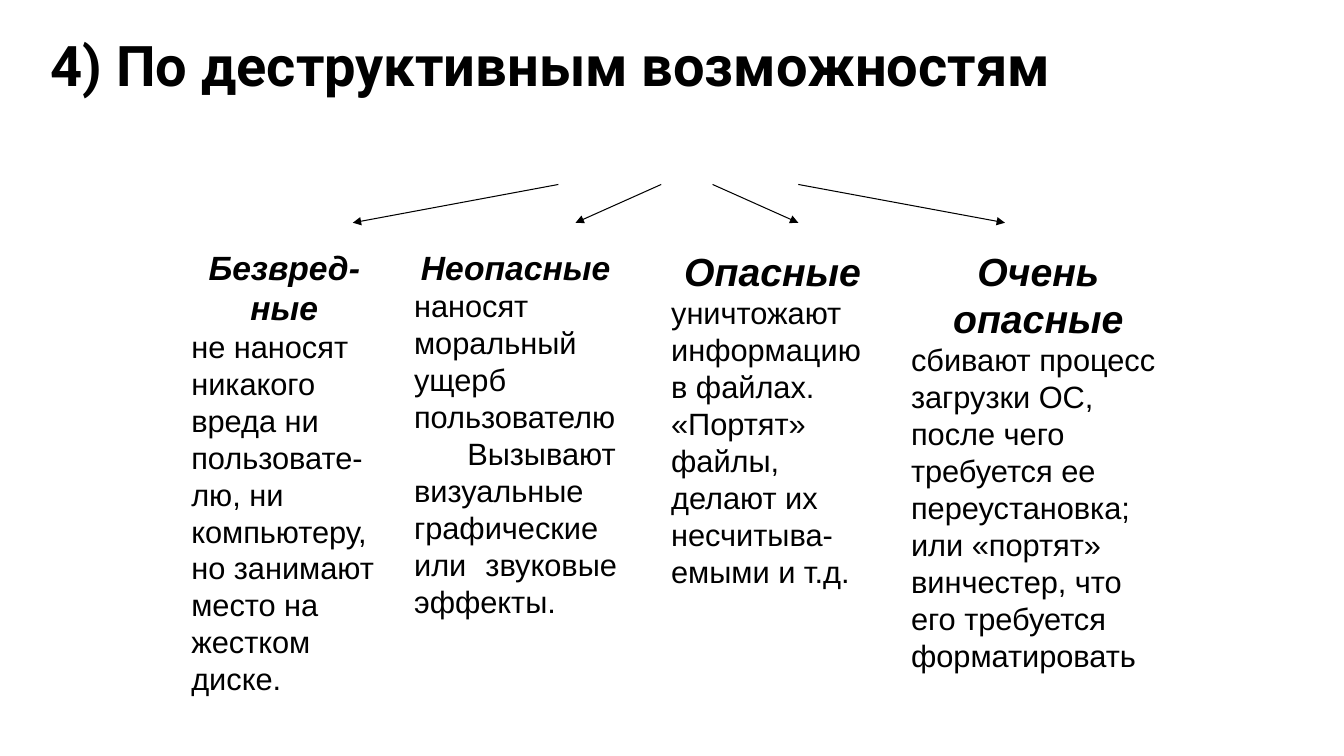
import pptx
import pptx.util
import pptx.dml.color
import pptx.enum.text
import pptx.enum.shapes
import pptx.oxml
import pptx.oxml.ns

Pt = pptx.util.Pt
Align = pptx.enum.text.PP_ALIGN
BLACK = pptx.dml.color.RGBColor(0, 0, 0)

ARROW_TOP, ARROW_BOTTOM = 131.76, 159.12
ARROWS = [(398.88, 252), (570.24, 717.84), (472.32, 411.12), (509.04, 570.24)]

COLUMN_TOP = 172.8
# left, width, height, heading, heading size, body paragraphs (text, alignment, indent)
COLUMNS = [
    (129.6, 146.88, 204.48, "Безвред-ные", 24,
     [("не наносят никакого вреда ни пользовате-лю, ни компьютеру, "
       "но занимают место на жестком диске.", Align.LEFT, 0)]),
    (288.72, 159.12, 204.48, "Неопасные", 24,
     [("наносят моральный ущерб пользователю", Align.JUSTIFY, 0),
      ("Вызывают визуальные графические или звуковые эффекты.", Align.JUSTIFY, 38)]),
    (472.32, 159.12, 204.48, "Опасные", 28,
     [("уничтожают информацию в файлах. «Портят» файлы, "
       "делают их несчитыва-емыми и т.д.", Align.LEFT, 0)]),
    (643.68, 195.84, 367.2, "Очень опасные", 28,
     [("сбивают процесс загрузки ОС, после чего требуется ее переустановка; "
       "или «портят» винчестер, что его требуется форматировать", Align.LEFT, 0)]),
]


class SlideBuilder:
    title_font = "Roboto"
    body_font = "Arial"
    body_size = 22

    def __init__(self, page):
        self.page = page

    def format_text(self, para, font, size, bold=False, italic=False):
        for span in para.runs:
            span.font.name = font
            span.font.size = Pt(size)
            span.font.bold = bold
            span.font.italic = italic
            span.font.color.rgb = BLACK

    def title(self, text, left, top, width, height):
        box = self.page.shapes.title
        box.left, box.top, box.width, box.height = map(Pt, (left, top, width, height))
        frame = box.text_frame
        frame.text = text
        frame.word_wrap = True
        frame.vertical_anchor = pptx.enum.text.MSO_ANCHOR.MIDDLE
        para = frame.paragraphs[0]
        para.alignment = Align.LEFT
        para.line_spacing = 0.9
        self.format_text(para, self.title_font, 40, bold=True)

    def arrow(self, start, end):
        line = self.page.shapes.add_connector(
            pptx.enum.shapes.MSO_CONNECTOR.STRAIGHT,
            Pt(start), Pt(ARROW_TOP), Pt(end), Pt(ARROW_BOTTOM))
        line.line.color.rgb = BLACK
        line.line.width = Pt(0.75)
        outline = line.element.spPr.find(pptx.oxml.ns.qn("a:ln"))
        outline.append(pptx.oxml.parse_xml(
            '<a:tailEnd xmlns:a="http://schemas.openxmlformats.org/drawingml/2006/main"'
            ' type="triangle"/>'))
        outline.addnext(outline.makeelement(pptx.oxml.ns.qn("a:effectLst"), {}))

    def column(self, left, width, height, heading, heading_size, body):
        box = self.page.shapes.add_textbox(Pt(left), Pt(COLUMN_TOP), Pt(width), Pt(height))
        frame = box.text_frame
        frame.word_wrap = True
        frame.text = heading
        para = frame.paragraphs[0]
        para.alignment = Align.CENTER
        self.format_text(para, self.body_font, heading_size, bold=True, italic=True)
        for text, alignment, indent in body:
            para = frame.add_paragraph()
            para.text = text
            para.alignment = alignment
            if indent:
                para._p.get_or_add_pPr().set("indent", str(Pt(indent)))
            self.format_text(para, self.body_font, self.body_size)


def main():
    deck = pptx.Presentation()
    deck.slide_width, deck.slide_height = Pt(960), Pt(540)
    page = deck.slides.add_slide(deck.slide_layouts[5])
    builder = SlideBuilder(page)

    # Title
    builder.title("4) По деструктивным возможностям", 28.8, 10.8, 902.88, 75.6)

    # Arrows fanning out to the columns
    for start, end in ARROWS:
        builder.arrow(start, end)

    # Text columns
    for column in COLUMNS:
        builder.column(*column)

    deck.save("out.pptx")


if __name__ == "__main__":
    main()
